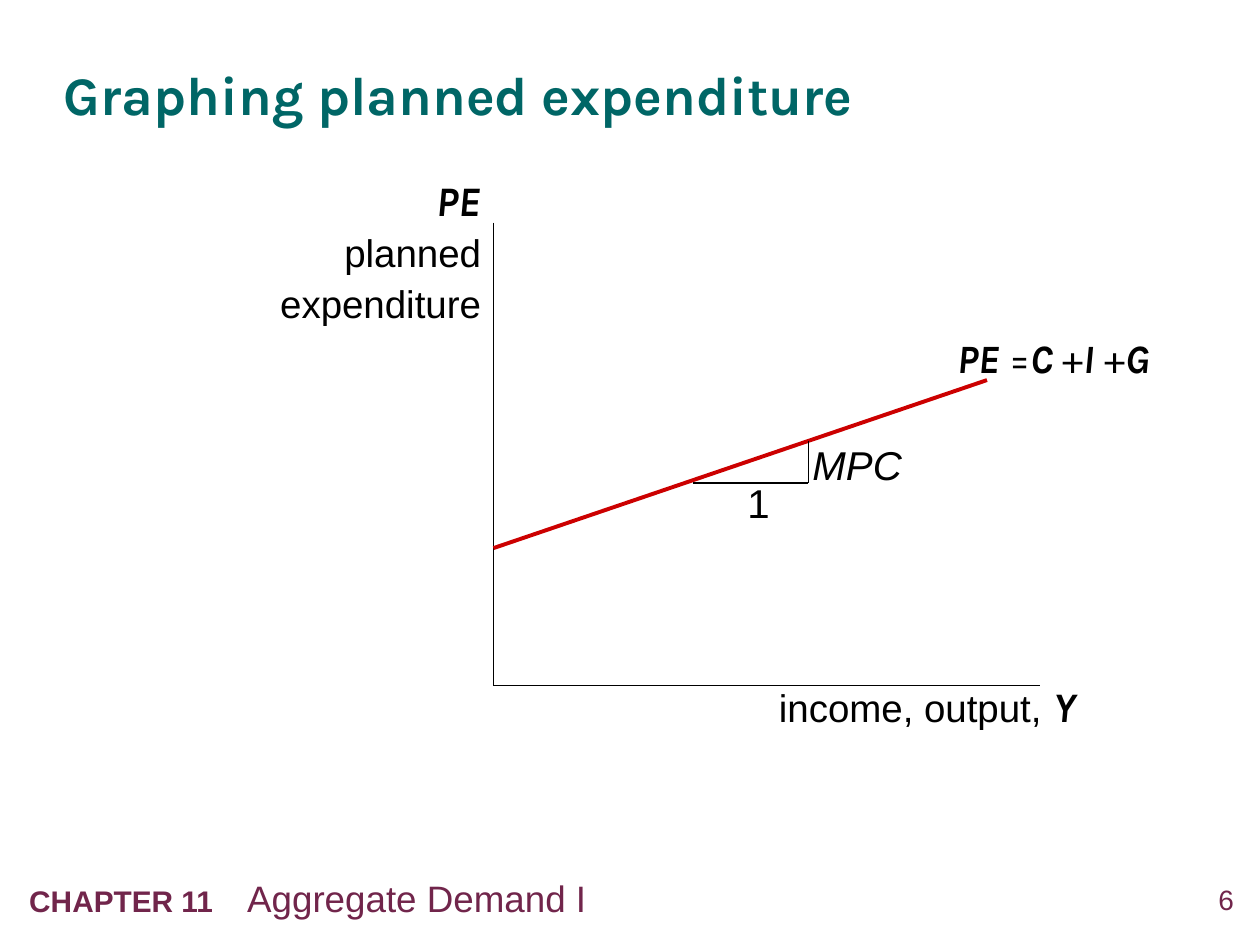
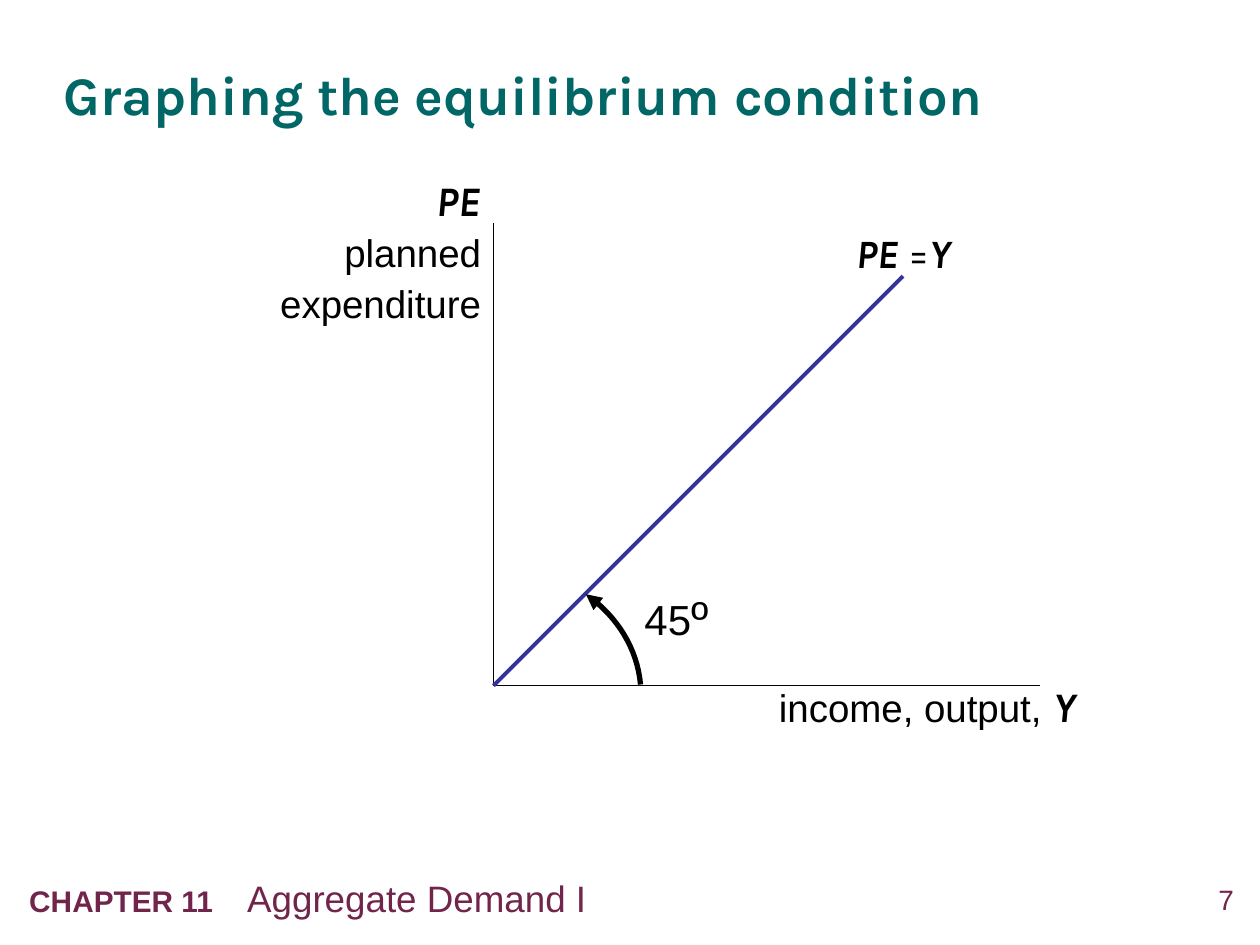
from pptx import Presentation
from pptx import util as u
from pptx.dml.color import RGBColor
from pptx.enum import shapes, text
from pptx.oxml.ns import qn
from lxml import etree

ink = RGBColor.from_string
deck = Presentation()
deck.slide_width, deck.slide_height = u.Inches(10), u.Inches(7.5)
cell = deck.slide_width / 120

BLACK, TEAL, PLUM, RED, BLUE = "000000", "006666", "71254B", "CC0000", "333399"
SANS, HEAD = "Arial", "Karla"
LEFT, RIGHT, TOP, BASE = 47, 99, 21.2, 65.3


def write(page, box, lines, hue=BLACK, pad=True, align="LEFT", gap=0):
    shape = page.shapes.add_textbox(*[u.Emu(round(n * cell)) for n in box])
    frame = shape.text_frame
    frame.word_wrap = True
    if not pad:
        frame.margin_left = frame.margin_right = 0
        frame.margin_top = frame.margin_bottom = 0
    for row, runs in enumerate(lines):
        para = frame.add_paragraph() if row else frame.paragraphs[0]
        para.alignment = getattr(text.PP_ALIGN, align)
        if row:
            para.space_before = u.Pt(gap)
        for words, size, face, style in runs:
            run = para.add_run()
            run.text = words
            font = para.font if len(runs) == 1 else run.font
            font.name, font.size = face, u.Pt(size)
            font.bold, font.italic = "b" in style, "i" in style
            font.color.rgb = ink(hue)
    return frame


def draw(page, start, end, hue=BLACK, width=1):
    ends = [u.Emu(round(n * cell)) for n in start + end]
    line = page.shapes.add_connector(shapes.MSO_CONNECTOR.STRAIGHT, *ends)
    line.line.color.rgb = ink(hue)
    line.line.width = u.Pt(width)
    etree.SubElement(line._element.spPr, qn("a:effectLst"))


pages = []
titles = ["Graphing planned expenditure", "Graphing the equilibrium condition"]
for number, title in enumerate(titles, 6):
    page = deck.slides.add_slide(deck.slide_layouts[6])
    pages.append(page)
    write(page, (110.9, 84.1, 6.6, 3.8), [[(str(number), 16, SANS, "")]],
          PLUM, False, "RIGHT")
    foot = write(page, (1.6, 82.8, 98, 5.4), [[
        ("CHAPTER 11\t", 17, SANS, "b"), ("Aggregate Demand I", 21, SANS, "")]], PLUM)
    tabs = etree.SubElement(foot.paragraphs[0]._p.get_or_add_pPr(), qn("a:tabLst"))
    etree.SubElement(tabs, qn("a:tab"), pos=str(u.Inches(1.73)), algn="l")
    head = write(page, (6.1, 3.1, 108.2, 12.4), [[(title, 31, HEAD, "b")]], TEAL, False)
    head.vertical_anchor = text.MSO_ANCHOR.MIDDLE
    head.paragraphs[0].line_spacing = 0.9

    draw(page, (LEFT, TOP), (LEFT, BASE))
    draw(page, (LEFT, BASE), (RIGHT, BASE))
    write(page, (73, 64.2, 34, 6), [[
        ("income, output,", 22, SANS, ""), (" ", 24, SANS, ""), ("Y", 24, HEAD, "bi")]])
    write(page, (23, 16, 24, 15.2), [
        [("PE", 24, HEAD, "bi")],
        [("planned", 22, SANS, "")],
        [("expenditure", 22, SANS, "")]], align="RIGHT", gap=2.5)

plan, even = pages
sums = [
    (plan, (90, 31.2, 27, 5.8), ["PE", " =", "C ", "+", "I ", "+", "G"]),
    (even, (80.4, 21.2, 14.8, 5.8), ["PE", " =", "Y"]),
]
for page, box, terms in sums:
    write(page, box, [[(term, 23, HEAD, "" if term.strip() in "=+" else "bi")
                       for term in terms]])

draw(plan, (LEFT, 52.2), (94, 36.2), RED, 2.25)
draw(plan, (66, 46), (77, 46), width=0.75)
draw(plan, (77, 46), (77, 42), width=0.75)
write(plan, (76.2, 41.3, 12, 5.8), [[("MPC", 23, SANS, "i")]])
write(plan, (70, 45, 5, 5.8), [[("1", 23, SANS, "")]])

draw(even, (LEFT, BASE), (86, 26.3), BLUE, 2.25)
knots = [(55.8, 56.6), (58.8, 58.7), (60.7, 61.8), (61, 65.2)]
curve = []
for step in range(17):
    t = step / 16
    parts = [(1 - t) ** 3, 3 * t * (1 - t) ** 2, 3 * t * t * (1 - t), t ** 3]
    curve.append([round(cell * sum(p * k[axis] for p, k in zip(parts, knots)))
                  for axis in (0, 1)])
path = even.shapes.build_freeform(*curve[0])
path.add_line_segments(curve[1:], close=False)
arc = path.convert_to_shape()
arc.shadow.inherit = False
arc.fill.background()
arc.line.color.rgb = ink(BLACK)
arc.line.width = u.Pt(3)
etree.SubElement(arc.line._get_or_add_ln(), qn("a:headEnd"), type="triangle")
write(even, (60.2, 55.4, 9, 6.6), [[("45", 24, SANS, ""), ("º", 27, SANS, "")]])

deck.save("out.pptx")
